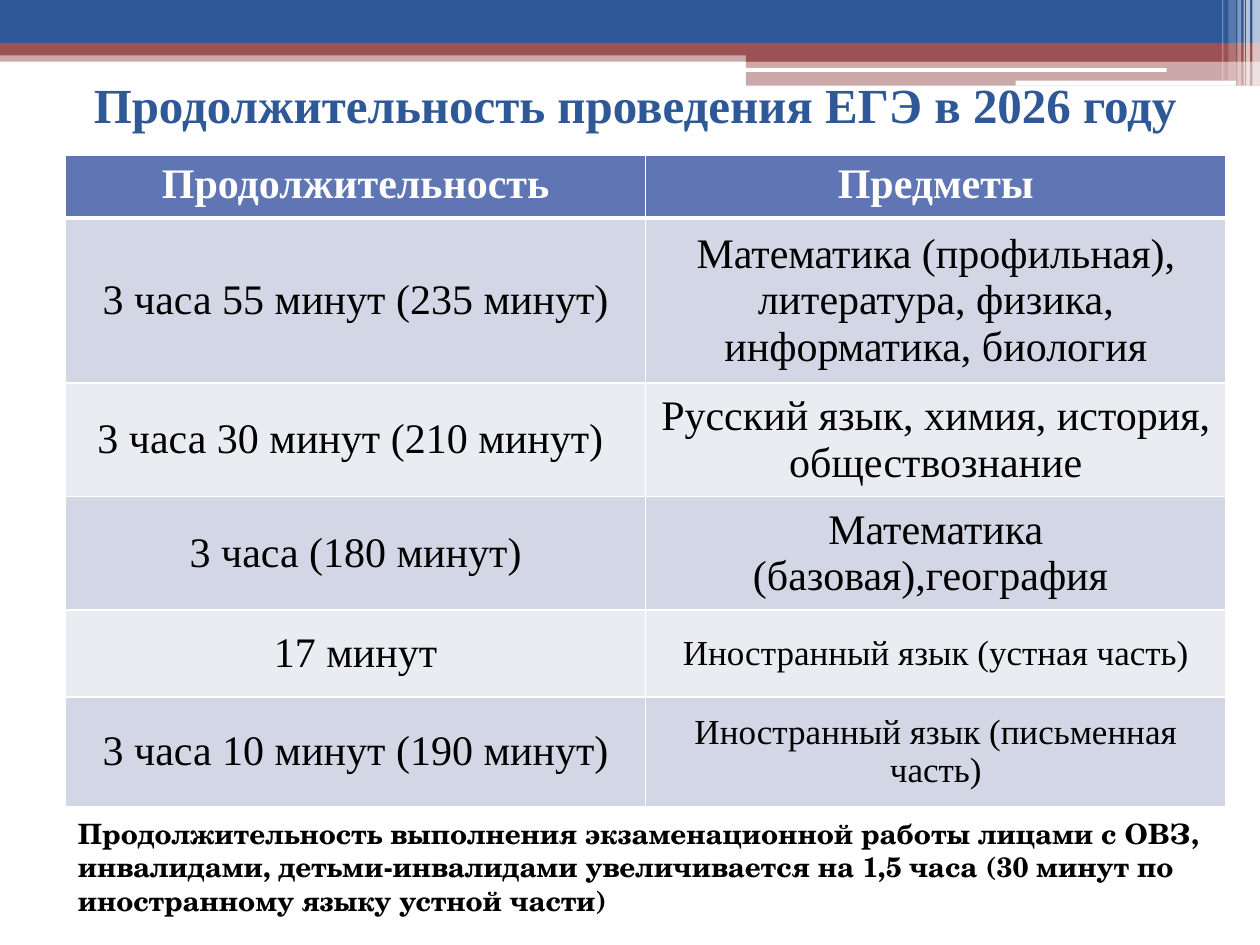
from dataclasses import dataclass

import lxml.etree
import pptx
import pptx.dml.color
import pptx.enum.shapes
import pptx.enum.text
import pptx.oxml.ns
import pptx.util

Inches = pptx.util.Inches
Anchor = pptx.enum.text.MSO_ANCHOR
Align = pptx.enum.text.PP_ALIGN
Preset = pptx.enum.shapes.MSO_SHAPE
qn = pptx.oxml.ns.qn


@dataclass(frozen=True)
class Theme:
    blue: str = "2F5897"
    red: str = "9C5252"
    white: str = "FFFFFF"
    black: str = "000000"
    header: str = "6076B4"
    bands: tuple = ("D2D6E5", "EAECF2")
    serif: str = "Times New Roman"
    note_font: str = "TeX Gyre Schola"
    title_size: int = 28
    table_size: int = 24
    small_size: int = 20
    note_size: int = 16


@dataclass(frozen=True)
class Strip:
    left: float
    top: float
    width: float
    height: float
    color: str
    opacity: int = 100
    rounded: bool = False


@dataclass(frozen=True)
class TextStyle:
    size: int
    color: str
    font: str = "Times New Roman"
    bold: bool = False
    align: Align = Align.CENTER


@dataclass(frozen=True)
class Exam:
    duration: str
    subjects: str
    height: float
    subject_size: int


THEME = Theme()

STRIPS = [
    Strip(0, 0.4, 10, 0.09, THEME.red, 50),
    Strip(0, 0, 10, 0.34, THEME.blue),
    Strip(0, 0.34, 10, 0.1, THEME.red),
    Strip(5.92, 0.39, 4.08, 0.1, THEME.red),
    Strip(5.92, 0.48, 4.08, 0.2, THEME.red, 50),
    Strip(5.91, 0.54, 3.35, 0.03, THEME.white, rounded=True),
    Strip(8.06, 0.64, 1.75, 0.04, THEME.white, rounded=True),
    Strip(9.94, 0, 0.06, 0.68, THEME.white, 65),
    Strip(9.89, 0, 0.03, 0.68, THEME.white, 65),
    Strip(9.87, 0, 0.01, 0.68, THEME.white, 60),
    Strip(9.82, 0, 0.03, 0.68, THEME.white, 40),
    Strip(9.75, 0, 0.06, 0.64, THEME.white, 20),
    Strip(9.7, 0, 0.01, 0.64, THEME.white, 30),
]

EXAMS = [
    Exam("3 часа 55 минут (235 минут)",
         "Математика (профильная), литература, физика, информатика, биология",
         1.31, THEME.table_size),
    Exam("3 часа 30 минут (210 минут) ",
         "Русский язык, химия, история, обществознание", 0.9, THEME.table_size),
    Exam("3 часа (180 минут)", "Математика (базовая),география ", 0.9, THEME.table_size),
    Exam("17 минут", "Иностранный язык (устная часть)", 0.69, THEME.small_size),
    Exam("3 часа 10 минут (190 минут)", "Иностранный язык (письменная часть)",
         0.87, THEME.small_size),
]


def rgb(color: str) -> pptx.dml.color.RGBColor:
    """Turn a hex string into a colour."""
    return pptx.dml.color.RGBColor.from_string(color)


def draw_strip(slide: pptx.slide.Slide, strip: Strip) -> None:
    """Draw one decorative strip of the header."""
    preset = Preset.ROUNDED_RECTANGLE if strip.rounded else Preset.RECTANGLE
    band = slide.shapes.add_shape(preset, Inches(strip.left), Inches(strip.top),
                                  Inches(strip.width), Inches(strip.height))
    band.shadow.inherit = False
    band.line.fill.background()
    band.fill.solid()
    band.fill.fore_color.rgb = rgb(strip.color)
    if strip.opacity < 100:
        tint = band.fill._xPr.find(".//" + qn("a:srgbClr"))
        lxml.etree.SubElement(tint, qn("a:alpha"), val=str(strip.opacity * 1000))


def write(frame: pptx.text.text.TextFrame, wording: str, style: TextStyle) -> None:
    """Fill a text frame with one styled run."""
    paragraph = frame.paragraphs[0]
    paragraph.alignment = style.align
    run = paragraph.add_run()
    run.text = wording
    run.font.size = pptx.util.Pt(style.size)
    run.font.name = style.font
    run.font.bold = style.bold
    run.font.color.rgb = rgb(style.color)


def add_caption(slide: pptx.slide.Slide, box: tuple[float, float, float, float],
                wording: str, style: TextStyle, anchor: Anchor) -> None:
    """Add a wrapped text box."""
    frame = slide.shapes.add_textbox(*map(Inches, box)).text_frame
    frame.word_wrap = True
    frame.vertical_anchor = anchor
    write(frame, wording, style)


def set_borders(cell: pptx.table._Cell, top: int, bottom: int) -> None:
    """Give a cell white borders, with widths in points."""
    properties = cell._tc.get_or_add_tcPr()
    edges = {"a:lnL": 1, "a:lnR": 1, "a:lnT": top, "a:lnB": bottom}
    for position, (edge, width) in enumerate(edges.items()):
        border = lxml.etree.Element(qn(edge), w=str(pptx.util.Pt(width)))
        fill = lxml.etree.SubElement(border, qn("a:solidFill"))
        lxml.etree.SubElement(fill, qn("a:srgbClr"), val=THEME.white)
        properties.insert(position, border)


def fill_cell(cell: pptx.table._Cell, wording: str, style: TextStyle, color: str,
              anchor: Anchor, top: int = 1, bottom: int = 1) -> None:
    """Write, colour and frame one table cell."""
    cell.fill.solid()
    cell.fill.fore_color.rgb = rgb(color)
    cell.vertical_anchor = anchor
    set_borders(cell, top, bottom)
    write(cell.text_frame, wording, style)


def add_schedule(slide: pptx.slide.Slide) -> None:
    """Add the table of exam durations."""
    heights = [0.5] + [exam.height for exam in EXAMS]
    schedule = slide.shapes.add_table(len(heights), 2, Inches(0.52), Inches(1.23),
                                      Inches(9.21), Inches(sum(heights))).table
    for row, height in zip(schedule.rows, heights):
        row.height = Inches(height)
    heading = TextStyle(THEME.table_size, THEME.white, bold=True)
    for column, wording in enumerate(("Продолжительность", "Предметы")):
        fill_cell(schedule.cell(0, column), wording, heading, THEME.header,
                  Anchor.TOP, bottom=3)
    for index, exam in enumerate(EXAMS):
        entries = ((exam.duration, THEME.table_size), (exam.subjects, exam.subject_size))
        for column, (wording, size) in enumerate(entries):
            fill_cell(schedule.cell(index + 1, column), wording,
                      TextStyle(size, THEME.black), THEME.bands[index % 2],
                      Anchor.MIDDLE, top=1 if index else 3)


def main() -> None:
    """Build the slide and save it."""
    deck = pptx.Presentation()
    deck.slide_width, deck.slide_height = Inches(10), Inches(7.5)
    slide = deck.slides.add_slide(deck.slide_layouts[6])
    for strip in STRIPS:
        draw_strip(slide, strip)
    add_caption(slide, (0.54, 0.52, 9, 0.61), "Продолжительность проведения ЕГЭ в 2026 году",
                TextStyle(THEME.title_size, THEME.blue, THEME.serif, True), Anchor.MIDDLE)
    add_schedule(slide)
    add_caption(slide, (0.52, 6.43, 9.36, 0.91),
                "Продолжительность выполнения экзаменационной работы лицами с ОВЗ, "
                "инвалидами, детьми-инвалидами увеличивается на 1,5 часа "
                "(30 минут по иностранному языку устной части)",
                TextStyle(THEME.note_size, THEME.black, THEME.note_font, True, Align.LEFT),
                Anchor.TOP)
    deck.save("out.pptx")


if __name__ == "__main__":
    main()
